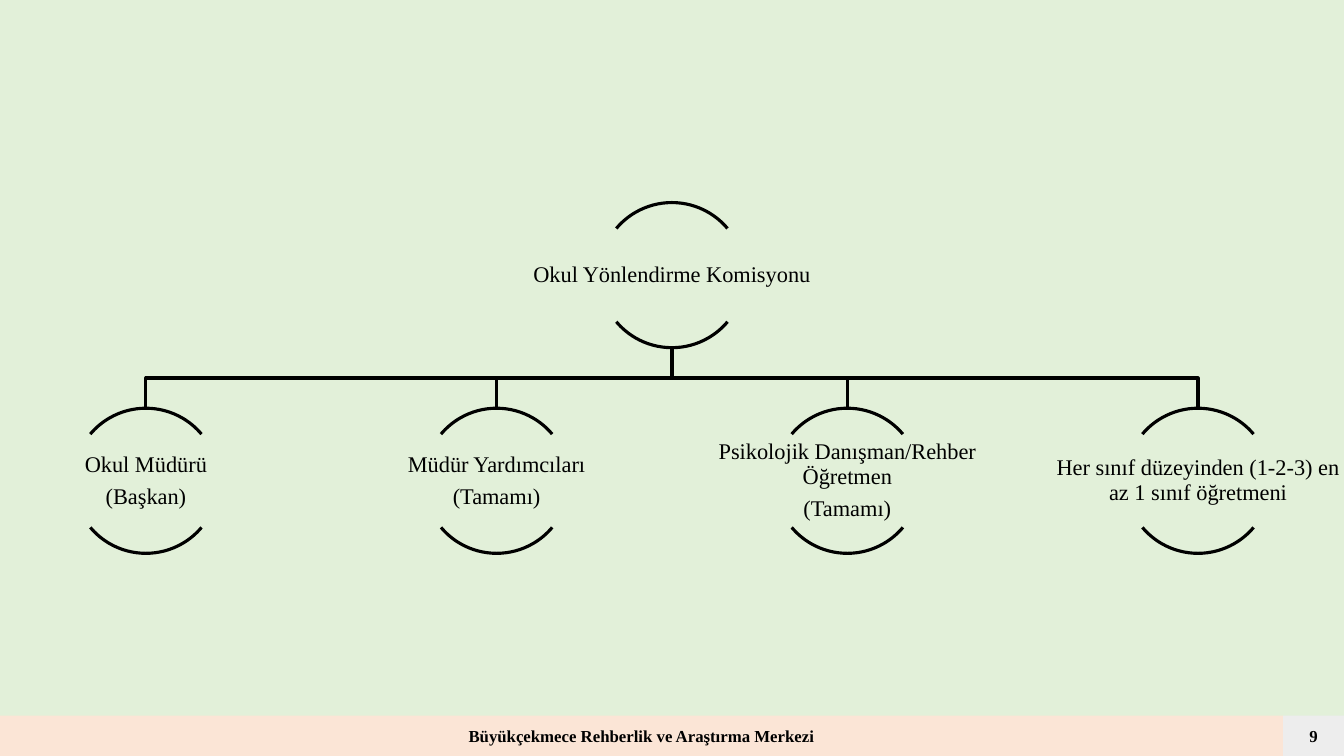
from pptx import Presentation
from pptx.dml.color import RGBColor
from pptx.enum.shapes import MSO_SHAPE
from pptx.enum.text import MSO_ANCHOR, PP_ALIGN
from pptx.util import Pt

ARC, RECT = MSO_SHAPE.ARC, MSO_SHAPE.RECTANGLE
MIDDLE, CENTER = MSO_ANCHOR.MIDDLE, PP_ALIGN.CENTER

BLACK = RGBColor(0x00, 0x00, 0x00)
GREEN = RGBColor(0xE2, 0xF0, 0xD9)
PEACH = RGBColor(0xFB, 0xE5, 0xD6)
GRAY = RGBColor(0xED, 0xED, 0xED)

WIDTH, HEIGHT = 960, 540
MID = WIDTH / 2
STEP = 250.5
ROOT_TOP, STAFF_TOP = 144.7, 291.6
RING = 103.7
LABEL_W, LABEL_H = 207.4, 66.4
BAR_TOP, BAR_W = 511.2, 916.6

ROOT = "Okul Yönlendirme Komisyonu"
STAFF = [
    "Okul Müdürü\n(Başkan)",
    "Müdür Yardımcıları\n(Tamamı)",
    "Psikolojik Danışman/Rehber Öğretmen\n(Tamamı)",
    "Her sınıf düzeyinden (1-2-3) en az 1 sınıf öğretmeni",
]


class Chart:
    font = "Times New Roman"
    stroke = 2.25

    def __init__(self, slide):
        self.slide = slide
        self.shapes = slide.shapes
        fill = slide.background.fill
        fill.solid()
        fill.fore_color.rgb = GREEN

    def label(self, shape, text, size, bold=False):
        frame = shape.text_frame
        frame.text = text
        frame.word_wrap = True
        frame.vertical_anchor = MIDDLE
        for par in frame.paragraphs:
            par.alignment = CENTER
            for run in par.runs:
                run.font.name = self.font
                run.font.size = Pt(size)
                run.font.bold = bold
                run.font.color.rgb = BLACK
        return frame

    def outline(self, shape):
        shape.shadow.inherit = False
        shape.fill.background()
        shape.line.color.rgb = BLACK
        shape.line.width = Pt(self.stroke)

    def link(self, x):
        """Draw the elbow from the root down to the node centred at x."""
        start = ROOT_TOP + RING
        bend = (start + STAFF_TOP) / 2
        pen = self.shapes.build_freeform(Pt(MID), Pt(start))
        turns = [(MID, bend), (x, bend), (x, STAFF_TOP)]
        pen.add_line_segments([(Pt(a), Pt(b)) for a, b in turns], close=False)
        self.outline(pen.convert_to_shape())

    def node(self, x, top, text):
        """Draw a label between the upper and lower arcs of a ring."""
        for start, end in ((132, 192), (24, 84)):
            arc = self.shapes.add_shape(
                ARC, Pt(x - RING / 2), Pt(top), Pt(RING), Pt(RING))
            arc.adjustments[0], arc.adjustments[1] = start, end
            self.outline(arc)
        box = self.shapes.add_textbox(
            Pt(x - LABEL_W / 2), Pt(top + (RING - LABEL_H) / 2),
            Pt(LABEL_W), Pt(LABEL_H))
        frame = self.label(box, text, 16)
        frame.margin_left = frame.margin_right = Pt(0.8)
        frame.margin_top = frame.margin_bottom = Pt(0.8)
        for par in frame.paragraphs:
            par.line_spacing = 0.9
            par.space_after = Pt(5.6)

    def bar(self, left, width, color, text):
        shape = self.shapes.add_shape(
            RECT, Pt(left), Pt(BAR_TOP), Pt(width), Pt(HEIGHT - BAR_TOP))
        shape.shadow.inherit = False
        shape.fill.solid()
        shape.fill.fore_color.rgb = color
        shape.line.fill.background()
        self.label(shape, text, 12, bold=True)


def main():
    deck = Presentation()
    deck.slide_width, deck.slide_height = Pt(WIDTH), Pt(HEIGHT)
    chart = Chart(deck.slides.add_slide(deck.slide_layouts[6]))

    spots = [MID + (i - (len(STAFF) - 1) / 2) * STEP for i in range(len(STAFF))]
    for x in reversed(spots):
        chart.link(x)
    chart.node(MID, ROOT_TOP, ROOT)
    for x, text in zip(spots, STAFF):
        chart.node(x, STAFF_TOP, text)

    chart.bar(0, BAR_W, PEACH, "Büyükçekmece Rehberlik ve Araştırma Merkezi")
    chart.bar(BAR_W, WIDTH - BAR_W, GRAY, "9")
    deck.save("out.pptx")


if __name__ == "__main__":
    main()
